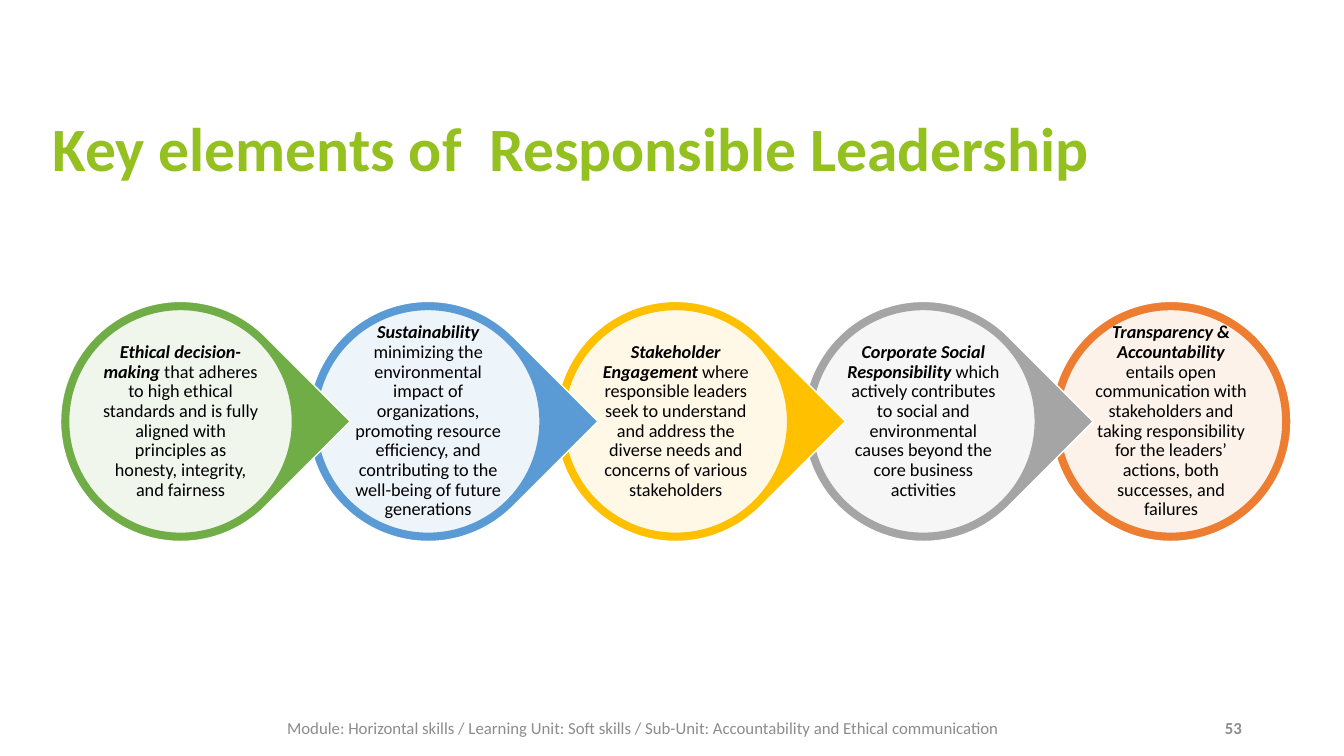
from dataclasses import dataclass

from lxml.etree import SubElement
from pptx import Presentation
from pptx.dml.color import RGBColor as Color
from pptx.enum.shapes import MSO_SHAPE as Shape
from pptx.enum.text import MSO_ANCHOR as Anchor, MSO_AUTO_SIZE as AutoSize, PP_ALIGN as Align
from pptx.oxml.ns import qn
from pptx.util import Cm, Pt


@dataclass(frozen=True)
class Theme:
    font: str = "Calibri"
    title: str = "94C020"
    muted: str = "8C8C8C"
    ink: str = "000000"
    paper: str = "FFFFFF"
    title_size: int = 44
    body_size: int = 13
    footer_size: int = 12
    line_width: int = 1


ELEMENTS = [
    ("70AD47", "Ethical decision-making",
     " that adheres to high ethical standards and is fully aligned with principles "
     "as honesty, integrity, and fairness"),
    ("5B9BD5", "Sustainability",
     " minimizing the environmental impact of organizations, promoting resource "
     "efficiency, and contributing to the well-being of future generations"),
    ("FFC000", "Stakeholder Engagement",
     " where responsible leaders seek to understand and address the diverse needs "
     "and concerns of various stakeholders"),
    ("A5A5A5", "Corporate Social Responsibility",
     " which actively contributes to social and environmental causes beyond the "
     "core business activities"),
    ("ED7D31", "Transparency & Accountability",
     " entails open communication with stakeholders and taking responsibility for "
     "the leaders’ actions, both successes, and failures"),
]
FIRST_CENTER, CENTER_Y, PITCH = 4.55, 10.62, 6.24
OUTER, INNER, TEXT_SIDE = 6.05, 5.64, 4.04


class SlideBuilder:
    def __init__(self, page, theme):
        self.page = page
        self.theme = theme

    def format(self, para, size, color, align, bold=False):
        para.alignment = align
        font = para.font
        font.name = self.theme.font
        font.size = Pt(size)
        font.bold = bold
        font.color.rgb = Color.from_string(color)

    def title(self, text, left, top, width, height):
        box = self.page.shapes.title
        box.left, box.top, box.width, box.height = map(Cm, (left, top, width, height))
        frame = box.text_frame
        frame.auto_size = AutoSize.NONE
        frame.vertical_anchor = Anchor.MIDDLE
        frame.text = text
        para = frame.paragraphs[0]
        para.line_spacing = 0.9
        self.format(para, self.theme.title_size, self.theme.title, Align.LEFT, True)

    def text_box(self, shapes, left, top, width, height):
        frame = shapes.add_textbox(*map(Cm, (left, top, width, height))).text_frame
        frame.word_wrap = True
        frame.vertical_anchor = Anchor.MIDDLE
        return frame

    def footer(self, text, left, top, width, height, align, bold=False):
        frame = self.text_box(self.page.shapes, left, top, width, height)
        frame.text = text
        self.format(frame.paragraphs[0], self.theme.footer_size, self.theme.muted, align, bold)

    def disc(self, shapes, kind, center, size, fill, line):
        shape = shapes.add_shape(kind, Cm(center - size / 2), Cm(CENTER_Y - size / 2),
                                 Cm(size), Cm(size))
        shape.shadow.inherit = False
        shape.fill.solid()
        shape.fill.fore_color.rgb = Color.from_string(fill)
        shape.line.color.rgb = Color.from_string(line)
        shape.line.width = Pt(self.theme.line_width)
        return shape

    def element(self, shapes, center, color, lead, detail, is_last):
        kind = Shape.OVAL if is_last else Shape.TEAR
        marker = self.disc(shapes, kind, center, OUTER, color, self.theme.paper)
        if not is_last:
            marker.rotation = 45
        face = self.disc(shapes, Shape.OVAL, center, INNER, self.theme.paper, color)
        fill_color = face.element.spPr.find(qn("a:solidFill")).find(qn("a:srgbClr"))
        SubElement(fill_color, qn("a:alpha")).set("val", "90000")

        frame = self.text_box(shapes, center - TEXT_SIDE / 2, CENTER_Y - TEXT_SIDE / 2,
                              TEXT_SIDE, TEXT_SIDE)
        frame.margin_left = frame.margin_right = Cm(0.05)
        frame.margin_top = frame.margin_bottom = Cm(0.05)
        para = frame.paragraphs[0]
        para.line_spacing = 0.9
        self.format(para, self.theme.body_size, self.theme.ink, Align.CENTER)
        span = para.add_run()
        span.text = lead
        span.font.bold = span.font.italic = True
        para.add_run().text = detail

    def chain(self, elements):
        shapes = self.page.shapes.add_group_shape().shapes
        last = len(elements) - 1
        for index, (color, lead, detail) in reversed(list(enumerate(elements))):
            center = FIRST_CENTER + index * PITCH
            self.element(shapes, center, color, lead, detail, index == last)


def main():
    deck = Presentation()
    deck.slide_width, deck.slide_height = Cm(33.87), Cm(19.05)
    page = deck.slides.add_slide(deck.slide_layouts[5])
    builder = SlideBuilder(page, Theme())
    builder.title("Key elements of  Responsible Leadership", 1.07, 2.59, 29.21, 2.44)
    builder.footer("Module: Horizontal skills / Learning Unit: Soft skills / "
                   "Sub-Unit: Accountability and Ethical communication",
                   2.34, 17.5, 27.74, 1.68, Align.CENTER)
    builder.footer("53", 30.28, 17.83, 1.27, 1.02, Align.RIGHT, True)
    builder.chain(ELEMENTS)
    deck.save("out.pptx")


if __name__ == "__main__":
    main()
